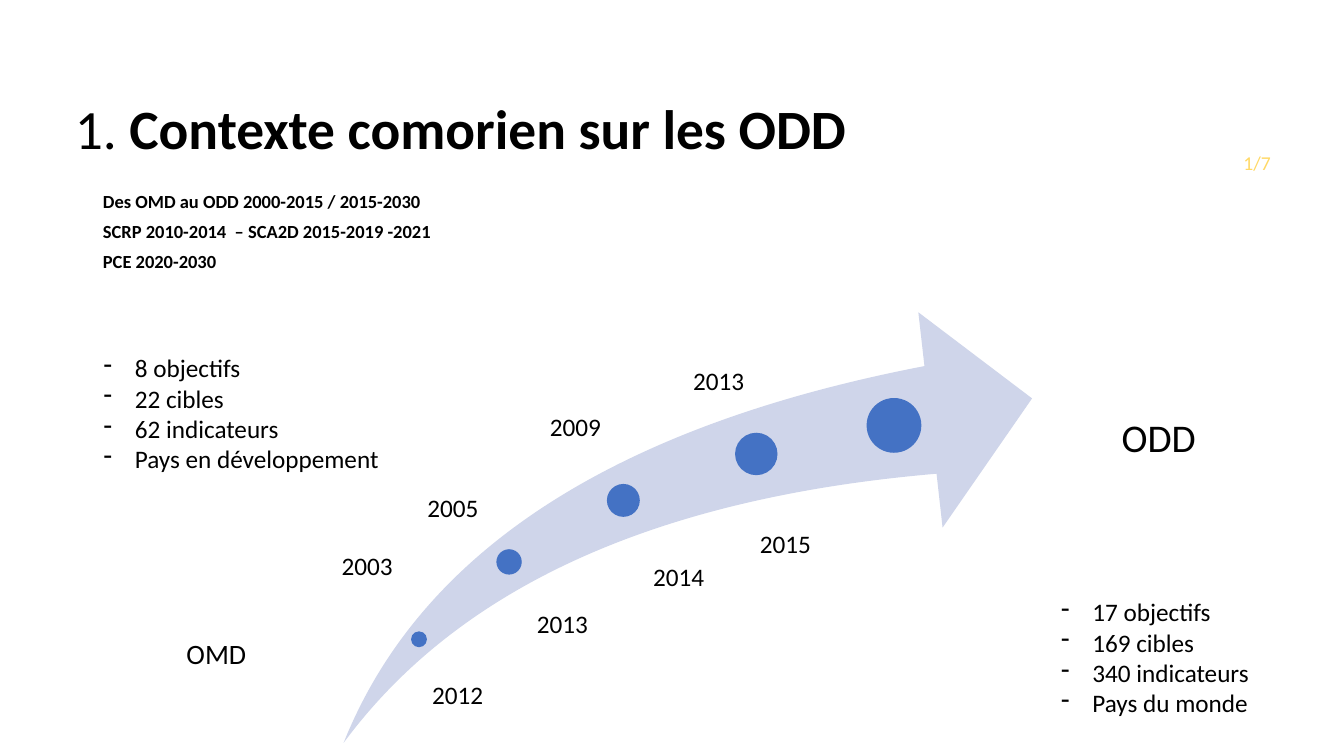
from lxml.etree import SubElement
from pptx import Presentation
from pptx.dml.color import RGBColor as RGB
from pptx.enum.shapes import MSO_SHAPE as Shape
from pptx.enum.text import MSO_ANCHOR as Anchor, MSO_AUTO_SIZE as Fit, PP_ALIGN as Align
from pptx.oxml.ns import qn
from pptx.util import Cm, Pt

FONT = "Calibri"
BLACK, GOLD, BLUE, PALE = "000000", "FFD966", "4472C4", "CFD5EA"

# Centre x, centre y and diameter, in cm
DOTS = [(10.56, 16.11, 0.4), (12.83, 14.16, 0.64), (15.71, 12.61, 0.83),
        (19.06, 11.44, 1.07), (22.53, 10.72, 1.38)]

# Year with the left and top of its label, in cm
YEARS = [("2003", 8.36, 13.74), ("2005", 10.52, 12.27),
         ("2009", 13.61, 10.24), ("2013", 17.22, 9.09),
         ("2012", 10.64, 16.99), ("2013", 13.28, 15.21),
         ("2014", 16.21, 14.02), ("2015", 18.9, 13.18)]


def color(code):
    return RGB.from_string(code)


def write(par, text, size=18, bold=False, ink=BLACK):
    run = par.add_run()
    run.text = text
    font = run.font
    font.name, font.size, font.bold = FONT, Pt(size), bold
    font.color.rgb = color(ink)


def mark(par, sign=None, indent=0):
    """Set the bullet sign and hanging indent of a paragraph."""
    props = par._p.get_or_add_pPr()
    props.set("marL", str(Cm(indent)))
    props.set("indent", str(-Cm(indent)))
    if sign:
        SubElement(props, qn("a:buChar")).set("char", sign)
    else:
        SubElement(props, qn("a:buNone"))


def place(shape, x, y, w, h):
    shape.left, shape.top, shape.width, shape.height = Cm(x), Cm(y), Cm(w), Cm(h)


def lines(frame):
    """Yield the first paragraph of a frame, then new ones."""
    yield frame.paragraphs[0]
    while True:
        yield frame.add_paragraph()


def label(slide, text, x, y, w, h, align=Align.LEFT, **style):
    frame = slide.shapes.add_textbox(Cm(x), Cm(y), Cm(w), Cm(h)).text_frame
    frame.word_wrap = True
    frame.auto_size = Fit.SHAPE_TO_FIT_TEXT
    par = frame.paragraphs[0]
    par.alignment = align
    write(par, text, **style)
    return frame


def goal(slide, text, x, y, w, h, size, drop=0):
    frame = label(slide, text, x, y, w, h, size=size)
    frame.auto_size = Fit.NONE
    frame.margin_left, frame.margin_top = Cm(0.33), Cm(drop)
    frame.margin_right = frame.margin_bottom = 0
    frame.paragraphs[0].line_spacing = 0.9


def points(slide, items, x, y, w, h):
    frame = slide.shapes.add_textbox(Cm(x), Cm(y), Cm(w), Cm(h)).text_frame
    frame.word_wrap = True
    frame.auto_size = Fit.SHAPE_TO_FIT_TEXT
    for item, par in zip(items, lines(frame)):
        mark(par, "-", 0.79)
        write(par, item)


def solid(slide, kind, x, y, w, h, fill):
    shape = slide.shapes.add_shape(kind, Cm(x), Cm(y), Cm(w), Cm(h))
    shape.shadow.inherit = False
    shape.fill.solid()
    shape.fill.fore_color.rgb = color(fill)
    shape.line.fill.background()
    return shape


def head(slide):
    title = slide.shapes.title
    place(title, 1.63, 2.57, 20.98, 2.74)
    frame = title.text_frame
    frame.auto_size = Fit.NONE
    frame.vertical_anchor = Anchor.TOP
    frame.margin_top = 0
    par = frame.paragraphs[0]
    par.alignment, par.line_spacing = Align.LEFT, 0.9
    write(par, "1. ", size=39.6)
    write(par, "Contexte comorien sur les ODD", size=39.6, bold=True)


def plans(slide, items):
    body = slide.placeholders[1]
    place(body, 2.34, 4.67, 14.33, 2.29)
    frame = body.text_frame
    frame.auto_size = Fit.NONE
    frame.vertical_anchor = Anchor.BOTTOM
    for item, par in zip(items, lines(frame)):
        par.line_spacing, par.space_before = 0.7, Pt(10)
        mark(par)
        write(par, item, size=13.2, bold=True)


def main():
    deck = Presentation()
    deck.slide_width, deck.slide_height = Cm(33.87), Cm(19.05)
    slide = deck.slides.add_slide(deck.slide_layouts[1])

    # Heading and page count
    label(slide, "1/7", 26.77, 3.68, 5.51, 0.86, Align.RIGHT, size=14, ink=GOLD)
    head(slide)
    plans(slide, ["Des OMD au ODD 2000-2015 / 2015-2030",
                  "SCRP 2010-2014  – SCA2D 2015-2019 -2021",
                  "PCE 2020-2030"])

    # Rising arrow with its milestones
    arrow = solid(slide, Shape.SWOOSH_ARROW, 8.66, 7.87, 17.35, 10.85, PALE)
    arrow.adjustments[0] = arrow.adjustments[1] = 0.25
    for x, y, d in DOTS:
        solid(slide, Shape.OVAL, x - d / 2, y - d / 2, d, d, BLUE)
    for year, x, y in YEARS:
        label(slide, year, x, y, 2.24, 1.02)

    # Start and end goals
    goal(slide, "OMD", 4.37, 16.13, 2.26, 2.59, 20)
    goal(slide, "ODD", 27.94, 8.84, 2.87, 4.55, 28, drop=1.7)
    points(slide, ["8 objectifs", "22 cibles", "62 indicateurs",
                   "Pays en développement"], 2.36, 8.76, 8.43, 3.33)
    points(slide, ["17 objectifs", "169 cibles", "340 indicateurs",
                   "Pays du monde"], 26.49, 14.91, 5.64, 3.33)

    deck.save("out.pptx")


if __name__ == "__main__":
    main()
